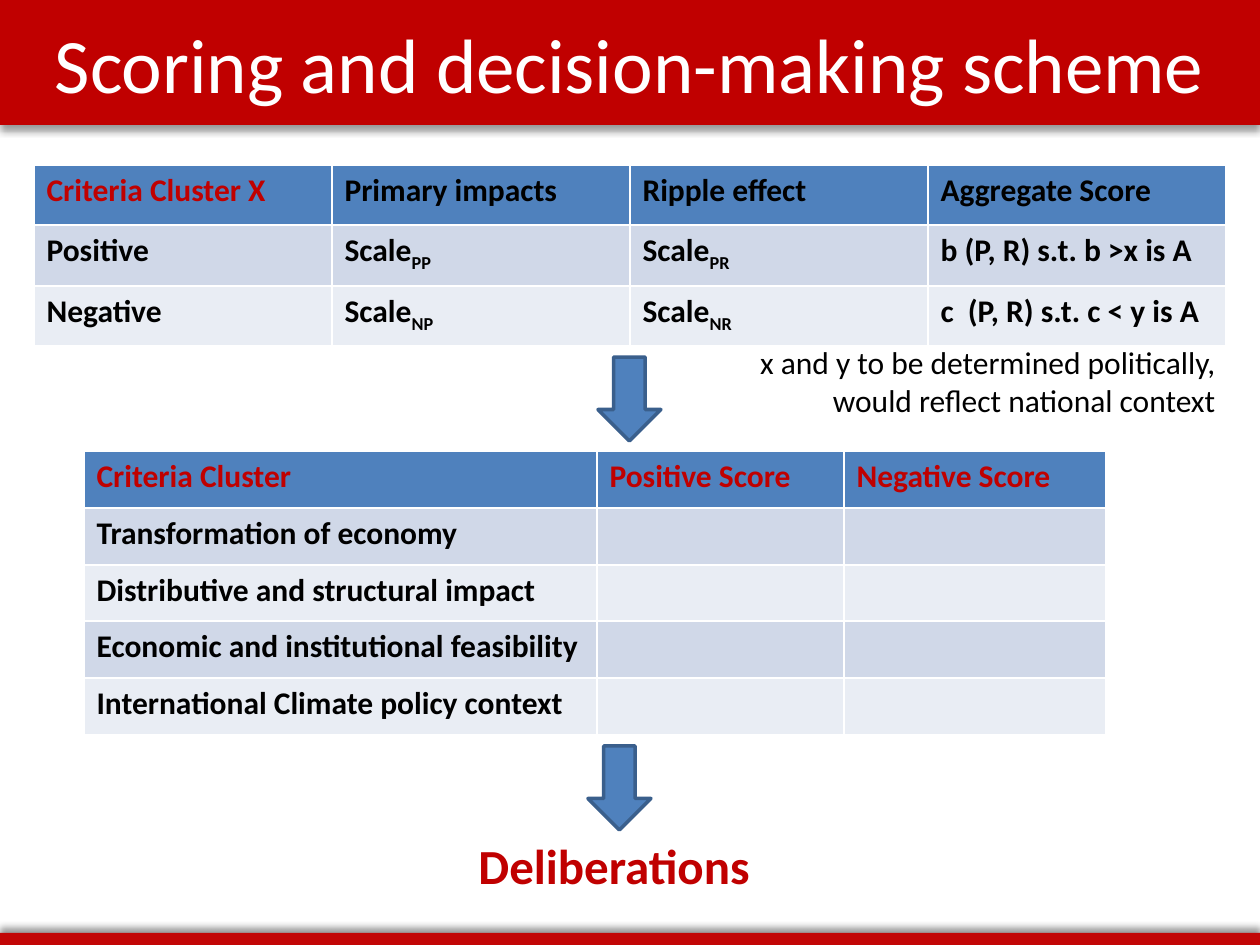
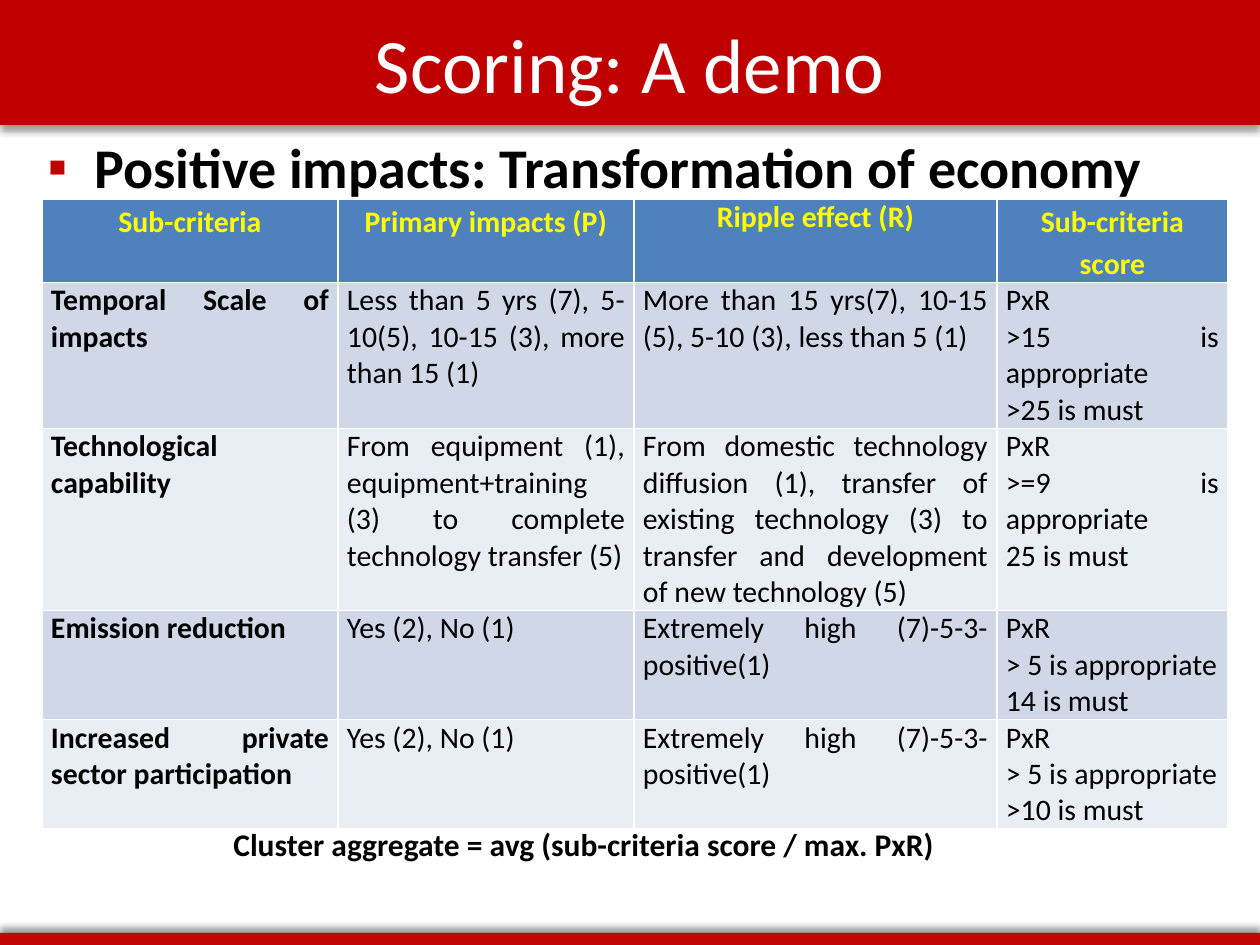
from lxml import etree
from pptx import Presentation
from pptx.dml.color import RGBColor
from pptx.enum.shapes import MSO_SHAPE
from pptx.enum.text import MSO_ANCHOR, PP_ALIGN
from pptx.oxml.ns import qn
from pptx.util import Emu, Pt

RECTANGLE, DOWN_ARROW = MSO_SHAPE.RECTANGLE, MSO_SHAPE.DOWN_ARROW
MIDDLE = MSO_ANCHOR.MIDDLE
LEFT, CENTER, RIGHT, JUSTIFY = (
    PP_ALIGN.LEFT, PP_ALIGN.CENTER, PP_ALIGN.RIGHT, PP_ALIGN.JUSTIFY)

FONT = "Calibri"
PX_PER_INCH = 126
SLIDE_W, SLIDE_H = 1260, 945
TITLE_H, FOOTER_H = 125, 12
TITLE_ONLY, TITLE_AND_CONTENT = 5, 1
COLORS = {
    "title_band": "C00000", "footer_band": "C20606", "accent": "C00000",
    "header": "4F81BD", "odd_row": "D0D8E8", "even_row": "E9EDF4",
    "arrow_line": "3A5F8C", "text": "000000", "white": "FFFFFF",
    "yellow": "FFFF00", "shadow": "000000",
}

SCHEME_TITLE = "Scoring and decision-making scheme"
# An underscore starts a subscript.
CLUSTER_ROWS = [
    ["Criteria Cluster X", "Primary impacts", "Ripple effect", "Aggregate Score"],
    ["Positive", "Scale_PP", "Scale_PR", "b (P, R) s.t. b >x is A"],
    ["Negative", "Scale_NP", "Scale_NR", "c  (P, R) s.t. c < y is A"],
]
SCORE_ROWS = [
    ["Criteria Cluster", "Positive Score", "Negative Score"],
    ["Transformation of economy", "", ""],
    ["Distributive and structural impact", "", ""],
    ["Economic and institutional feasibility", "", ""],
    ["International Climate policy context", "", ""],
]
ARROW_CORNERS = [(598, 357), (588, 746)]
OUTCOME = "Deliberations"
THRESHOLD_NOTE = ("x and y to be determined politically, "
                  "would reflect national context")

DEMO_TITLE = "Scoring: A demo"
DEMO_HEADING = "Positive impacts: Transformation of economy"
DEMO_ROWS = [
    ["Sub-criteria", "Primary impacts (P)", "Ripple effect (R)",
     "Sub-criteria score"],
    ["Temporal Scale of impacts",
     "Less than 5 yrs (7), 5-10(5), 10-15 (3), more than 15 (1)",
     "More than 15 yrs(7), 10-15 (5), 5-10 (3), less than 5 (1)",
     "PxR\n>15 is appropriate\n>25 is must"],
    ["Technological capability",
     "From equipment (1), equipment+training (3) to complete "
     "technology transfer (5)",
     "From domestic technology diffusion (1), transfer of existing technology "
     "(3) to transfer and development of new technology (5)",
     "PxR\n>=9 is appropriate\n25 is must"],
    ["Emission reduction", "Yes (2), No (1)",
     "Extremely high (7)-5-3- positive(1)",
     "PxR\n> 5 is appropriate\n14 is must"],
    ["Increased private sector participation", "Yes (2), No (1)",
     "Extremely high (7)-5-3- positive(1)",
     "PxR\n> 5 is appropriate\n>10 is must"],
]
AGGREGATE_RULE = "Cluster aggregate = avg (sub-criteria score / max. PxR)"


def px(length):
    return Emu(round(length * 914400 / PX_PER_INCH))


def rgb(name):
    return RGBColor.from_string(COLORS[name])


def place(shape, left, top, width, height):
    shape.left, shape.top = px(left), px(top)
    shape.width, shape.height = px(width), px(height)


def paint(shape, color):
    shape.fill.solid()
    shape.fill.fore_color.rgb = rgb(color)


def style_text(frame, size, color="text", bold=False, align=LEFT):
    for paragraph in frame.paragraphs:
        paragraph.alignment = align
        for run in paragraph.runs:
            font = run.font
            font.name, font.size, font.bold = FONT, Pt(size), bold
            font.color.rgb = rgb(color)


def cast_shadow(shape, degrees):
    shape.shadow.inherit = False
    effects = shape._element.spPr.find(qn("a:effectLst"))
    shadow = etree.SubElement(effects, qn("a:outerShdw"), blurRad=str(Pt(4)),
                              dist=str(Pt(3)), dir=str(degrees * 60000),
                              rotWithShape="0")
    color = etree.SubElement(shadow, qn("a:srgbClr"), val=COLORS["shadow"])
    etree.SubElement(color, qn("a:alpha"), val="40000")


def add_titled_slide(prs, layout, title_text):
    slide = prs.slides.add_slide(prs.slide_layouts[layout])
    footer = slide.shapes.add_shape(
        RECTANGLE, 0, px(SLIDE_H - FOOTER_H), px(SLIDE_W), px(FOOTER_H))
    paint(footer, "footer_band")
    footer.line.fill.background()
    cast_shadow(footer, 270)

    title = slide.shapes.title
    place(title, 0, 0, SLIDE_W, TITLE_H)
    paint(title, "title_band")
    cast_shadow(title, 90)
    title.text_frame.text = title_text
    title.text_frame.vertical_anchor = MIDDLE
    style_text(title.text_frame, 44, "white", align=CENTER)
    return slide


def add_text(slide, box, text, size, **style):
    frame = slide.shapes.add_textbox(*map(px, box)).text_frame
    frame.word_wrap = True
    frame.text = text
    style_text(frame, size, **style)


def add_grid(slide, left, top, widths, heights, rows, style_cell):
    """Add a table; style_cell(cell, row, column) formats each cell's text."""
    table = slide.shapes.add_table(
        len(rows), len(widths), px(left), px(top),
        px(sum(widths)), px(sum(heights))).table
    for column, width in zip(table.columns, widths):
        column.width = px(width)
    for r, (texts, height) in enumerate(zip(rows, heights)):
        table.rows[r].height = px(height)
        band = "header" if r == 0 else "odd_row" if r % 2 else "even_row"
        for c, text in enumerate(texts):
            cell = table.cell(r, c)
            paint(cell, band)
            base, _, subscript = text.partition("_")
            cell.text_frame.text = base
            if subscript:
                run = cell.text_frame.paragraphs[0].add_run()
                run.text = subscript
                run._r.get_or_add_rPr().set("baseline", "-25000")
            style_cell(cell, r, c)


def style_cluster_cell(cell, row, column):
    color = "accent" if row == column == 0 else "text"
    style_text(cell.text_frame, 18, color, bold=True)


def style_score_cell(cell, row, column):
    style_text(cell.text_frame, 18, "text" if row else "accent", bold=True)


def style_demo_cell(cell, row, column):
    cell.margin_left = cell.margin_right = px(9)
    cell.margin_top = cell.margin_bottom = 0
    if row:
        style_text(cell.text_frame, 17, bold=column == 0, align=JUSTIFY)
    else:
        style_text(cell.text_frame, 17, "yellow", bold=True, align=CENTER)
        if column != 2:
            cell.text_frame.paragraphs[0].line_spacing = 1.15


def build_scheme(prs):
    slide = add_titled_slide(prs, TITLE_ONLY, SCHEME_TITLE)
    add_grid(slide, 34, 165, [298] * 4, [60, 61, 60],
             CLUSTER_ROWS, style_cluster_cell)
    add_grid(slide, 84, 451, [513, 247, 262], [57, 57, 56, 57, 57],
             SCORE_ROWS, style_score_cell)
    for left, top in ARROW_CORNERS:
        arrow = slide.shapes.add_shape(
            DOWN_ARROW, px(left), px(top), px(63), px(84))
        paint(arrow, "header")
        arrow.line.color.rgb = rgb("arrow_line")
        arrow.line.width = Pt(2)
        arrow.shadow.inherit = False
    add_text(slide, (378, 829, 472, 72), OUTCOME, 28,
             color="accent", bold=True, align=CENTER)
    add_text(slide, (693, 337, 535, 89), THRESHOLD_NOTE, 18, align=RIGHT)


def build_demo(prs):
    slide = add_titled_slide(prs, TITLE_AND_CONTENT, DEMO_TITLE)
    body = slide.placeholders[1]
    place(body, 35, 126, 1191, 679)
    body.text_frame.text = DEMO_HEADING
    heading = body.text_frame.paragraphs[0]
    properties = heading._p.get_or_add_pPr()
    properties.set("marL", str(px(47)))
    properties.set("indent", str(px(-47)))
    bullet_color = etree.SubElement(properties, qn("a:buClr"))
    etree.SubElement(bullet_color, qn("a:srgbClr"), val=COLORS["accent"])
    etree.SubElement(properties, qn("a:buChar"), char="▪")
    heading.space_before = Pt(0)
    style_text(body.text_frame, 32, bold=True)

    add_grid(slide, 42, 199, [296, 296, 363, 231], [82, 146, 182, 109, 109],
             DEMO_ROWS, style_demo_cell)
    add_text(slide, (221, 819, 746, 50), AGGREGATE_RULE, 18, bold=True)


def main():
    prs = Presentation()
    prs.slide_width, prs.slide_height = px(SLIDE_W), px(SLIDE_H)
    build_scheme(prs)
    build_demo(prs)
    prs.save("out.pptx")


if __name__ == "__main__":
    main()
